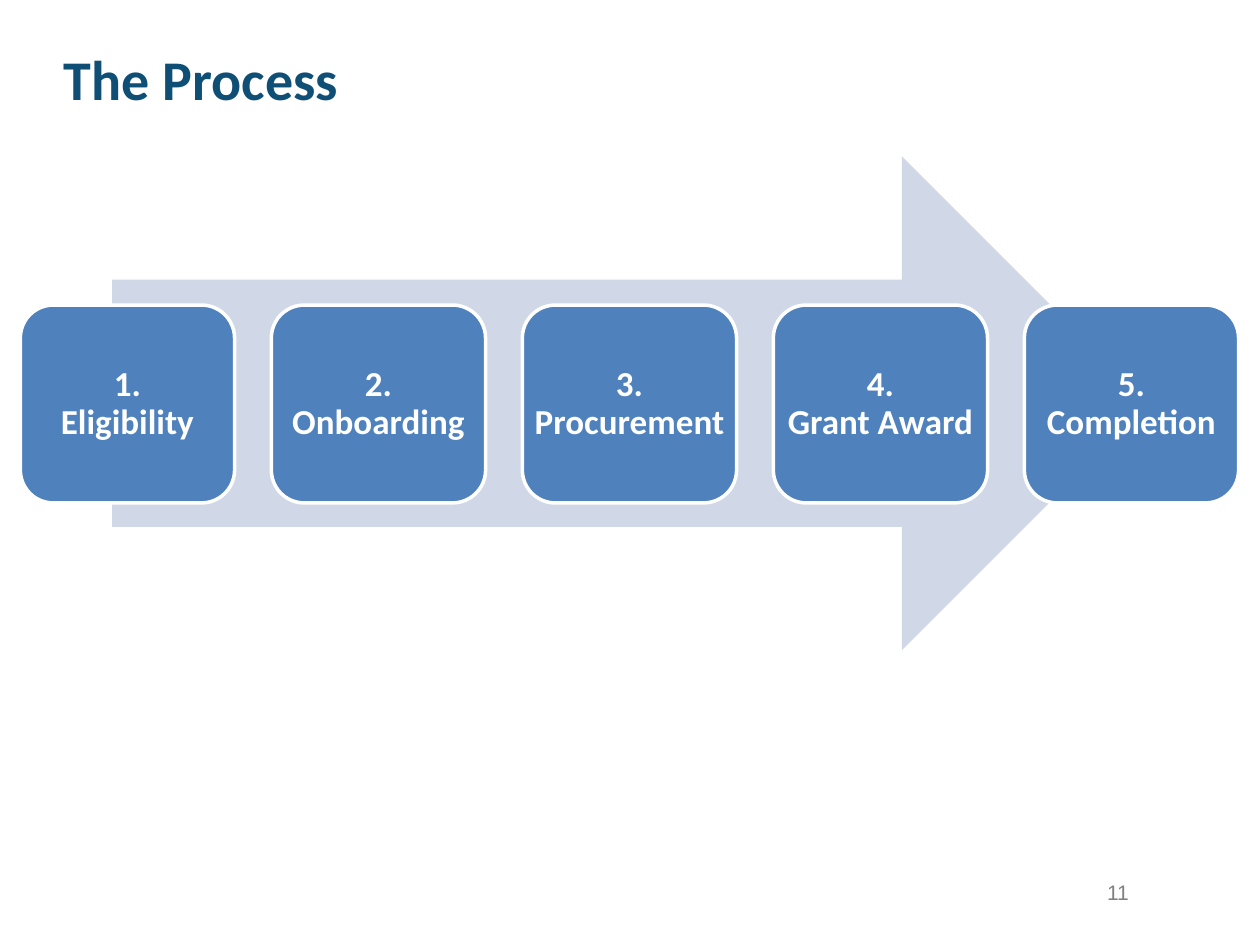
from dataclasses import dataclass

from pptx import Presentation
from pptx import util as u
from pptx.dml.color import RGBColor
from pptx.enum import shapes, text

COLORS = {
    "title": "104F75",
    "arrow": "D0D8E8",
    "step": "4F81BD",
    "white": "FFFFFF",
    "number": "808080",
}
STEP_LEFT, STEP_TOP, STEP_PITCH = 0.41, 6.15, 5.06
STEP_WIDTH, STEP_HEIGHT = 4.32, 3.99


@dataclass
class Step:
    number: int
    name: str


STEPS = [
    Step(number, name)
    for number, name in enumerate(
        ["Eligibility", "Onboarding", "Procurement", "Grant Award", "Completion"], 1
    )
]


def color(name: str) -> RGBColor:
    return RGBColor.from_string(COLORS[name])


def write(box, words: str, *, size: float, fill: str, font: str = "Calibri",
          bold: bool = False, align=text.PP_ALIGN.LEFT,
          anchor=text.MSO_ANCHOR.TOP, spacing: float = 1.0,
          side: float = 0.25, edge: float = 0.13) -> None:
    frame = box.text_frame
    frame.word_wrap = True
    frame.auto_size = text.MSO_AUTO_SIZE.NONE
    frame.vertical_anchor = anchor
    frame.margin_left = frame.margin_right = u.Cm(side)
    frame.margin_top = frame.margin_bottom = u.Cm(edge)
    para = frame.paragraphs[0]
    para.text = words
    para.alignment = align
    para.line_spacing = spacing
    for span in para.runs:
        span.font.name = font
        span.font.size = u.Pt(size)
        span.font.bold = bold
        span.font.color.rgb = color(fill)


def draw_shape(page, kind, left: float, top: float, width: float,
               height: float, fill: str):
    shape = page.shapes.add_shape(
        kind, u.Cm(left), u.Cm(top), u.Cm(width), u.Cm(height)
    )
    shape.shadow.inherit = False
    shape.fill.solid()
    shape.fill.fore_color.rgb = color(fill)
    shape.line.fill.background()
    return shape


def draw_step(page, step: Step) -> None:
    left = STEP_LEFT + (step.number - 1) * STEP_PITCH
    box = draw_shape(page, shapes.MSO_SHAPE.ROUNDED_RECTANGLE, left, STEP_TOP,
                     STEP_WIDTH, STEP_HEIGHT, "step")
    box.line.color.rgb = color("white")
    box.line.width = u.Pt(2)
    write(box, f"{step.number}.\v{step.name}", size=20, fill="white", bold=True,
          align=text.PP_ALIGN.CENTER, anchor=text.MSO_ANCHOR.MIDDLE,
          spacing=0.9, side=0, edge=0.2)


def main() -> None:
    deck = Presentation()
    deck.slide_width, deck.slide_height = u.Cm(25.4), u.Cm(19.05)
    page = deck.slides.add_slide(deck.slide_layouts[5])

    title = page.shapes.title
    title.left, title.top = u.Cm(1.04), u.Cm(0.76)
    title.width, title.height = u.Cm(23.24), u.Cm(1.96)
    write(title, "The Process", size=32, fill="title", bold=True)

    draw_shape(page, shapes.MSO_SHAPE.RIGHT_ARROW, 2.26, 3.15, 20.9, 9.96, "arrow")
    for step in STEPS:
        draw_step(page, step)

    number = page.shapes.add_textbox(u.Cm(22.07), u.Cm(17.6), u.Cm(1.42), u.Cm(1.02))
    write(number, "11", size=12, fill="number", font="Arial")

    deck.save("out.pptx")


if __name__ == "__main__":
    main()
